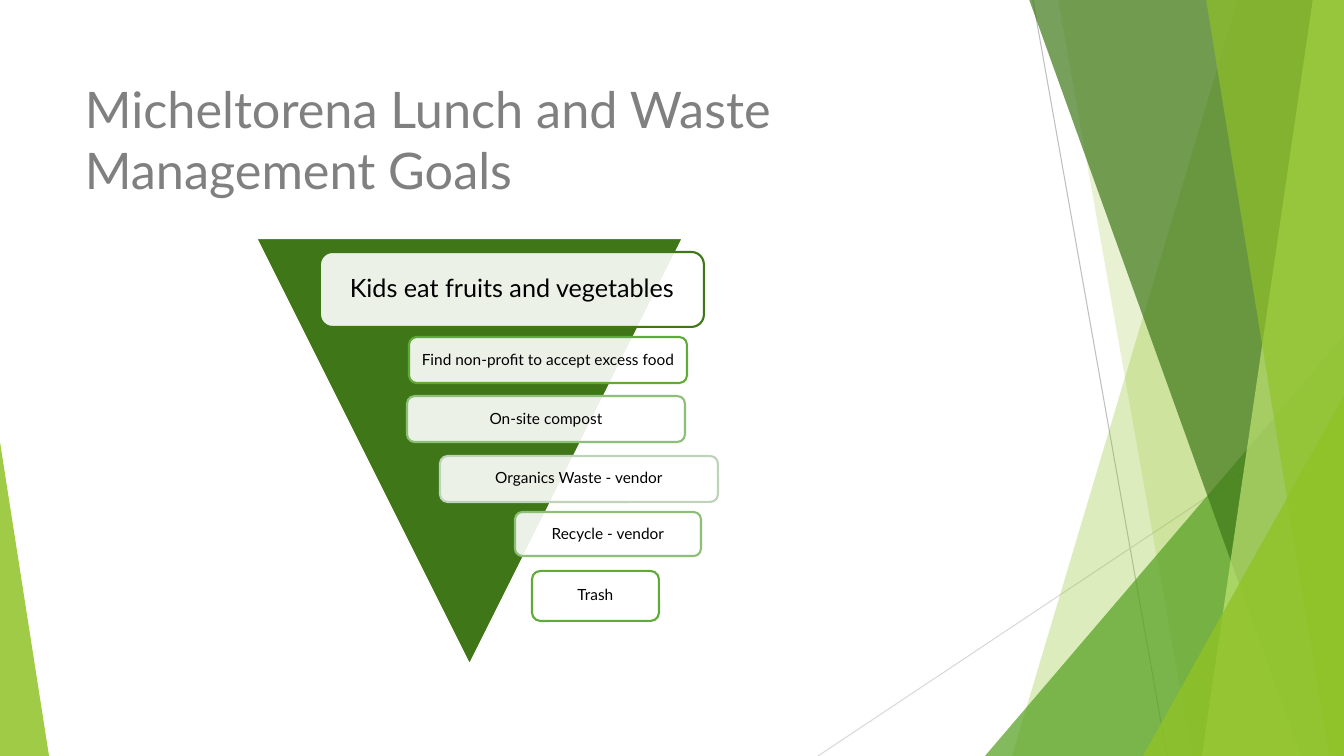
from pptx import Presentation
from pptx.dml.color import RGBColor
from pptx.enum.shapes import MSO_CONNECTOR, MSO_SHAPE
from pptx.enum.text import MSO_ANCHOR, PP_ALIGN
from pptx.oxml.ns import qn
from pptx.util import Emu, Pt
from lxml import etree

PX = 914400 / 100.8
WIDTH, HEIGHT = 1344, 756
FONT = "Lato"

STRAIGHT = MSO_CONNECTOR.STRAIGHT
TRIANGLE = MSO_SHAPE.ISOSCELES_TRIANGLE
ROUNDED = MSO_SHAPE.ROUNDED_RECTANGLE
MIDDLE = MSO_ANCHOR.MIDDLE
CENTER = PP_ALIGN.CENTER

WHITE = RGBColor(0xFF, 0xFF, 0xFF)
BLACK = RGBColor(0x00, 0x00, 0x00)
TITLE_GRAY = RGBColor(0x80, 0x80, 0x80)
RAY_GRAY = RGBColor(0xBF, 0xBF, 0xBF)
PALE_GRAY = RGBColor(0xD9, 0xD9, 0xD9)
LIME = RGBColor(0x90, 0xC2, 0x26)
PALE_LIME = RGBColor(0xC0, 0xE4, 0x74)
GREEN = RGBColor(0x54, 0xA0, 0x21)
FOREST = RGBColor(0x3F, 0x78, 0x19)
FUNNEL_GREEN = RGBColor(0x3E, 0x76, 0x18)
LEAF = RGBColor(0x60, 0xAB, 0x38)
SAGE = RGBColor(0x8D, 0xBF, 0x78)
MIST = RGBColor(0xBF, 0xD2, 0xBA)

# Goals: text, left, top, width, height, outline, text size, inset
GOALS = [
    ("Kids eat fruits and vegetables", 320, 252, 384, 75, FUNNEL_GREEN, 18, 7),
    ("Find non-profit to accept excess food", 409, 337, 278, 46, LEAF, 11, 5),
    ("On-site compost", 407, 396, 278, 46, SAGE, 11, 5),
    ("Organics Waste - vendor", 440, 456, 278, 46, MIST, 11, 5),
    ("Recycle - vendor", 515, 512, 186, 44, SAGE, 11, 5),
    ("Trash", 532, 571, 127, 50, LEAF, 11, 5),
]


def px(*lengths):
    return [Emu(round(length * PX)) for length in lengths]


def paint(shape, color, opacity=100, outline=None):
    shape.shadow.inherit = False
    shape.fill.solid()
    shape.fill.fore_color.rgb = color
    if opacity < 100:
        tint = shape.fill._xPr.find(qn("a:solidFill"))[0]
        etree.SubElement(tint, qn("a:alpha"), val=str(opacity * 1000))
    if outline is None:
        shape.line.fill.background()
    else:
        shape.line.color.rgb = outline
        shape.line.width = Pt(1.5)


def add_ray(slide, x1, y1, x2, y2, color):
    ray = slide.shapes.add_connector(STRAIGHT, *px(x1, y1, x2, y2))
    ray.line.color.rgb = color
    ray.line.width = Pt(0.75)
    etree.SubElement(ray._element.spPr, qn("a:effectLst"))


def add_band(slide, top_x, bottom_x, color, opacity):
    """Band from a slanted left edge to the right edge of the slide."""
    outline = slide.shapes.build_freeform(top_x, -1, scale=PX)
    outline.add_line_segments(
        [(WIDTH, -1), (WIDTH, HEIGHT), (bottom_x, HEIGHT)], close=True)
    paint(outline.convert_to_shape(), color, opacity)


def add_corner(slide, left, top, width, apex, color, opacity):
    """Right triangle standing on the bottom edge of the slide."""
    corner = slide.shapes.add_shape(
        TRIANGLE, *px(left, top, width, HEIGHT - top))
    corner.adjustments[0] = apex
    paint(corner, color, opacity)


def write(shape, text, size, color):
    frame = shape.text_frame
    frame.word_wrap = True
    frame.vertical_anchor = MIDDLE
    paragraph = frame.paragraphs[0]
    paragraph.text = text
    paragraph.font.name = FONT
    paragraph.font.size = Pt(size)
    paragraph.font.color.rgb = color
    return paragraph


def add_goal(slide, text, left, top, width, height, outline, size, inset):
    goal = slide.shapes.add_shape(ROUNDED, *px(left, top, width, height))
    paint(goal, WHITE, 90, outline)
    paragraph = write(goal, text, size, BLACK)
    paragraph.alignment = CENTER
    paragraph.line_spacing = 0.9
    frame = goal.text_frame
    (frame.margin_left, frame.margin_top,
     frame.margin_right, frame.margin_bottom) = px(*[inset] * 4)


def main():
    deck = Presentation()
    deck.slide_width, deck.slide_height = px(WIDTH, HEIGHT)
    slide = deck.slides.add_slide(deck.slide_layouts[6])

    # Background facets
    add_ray(slide, 1033, 0, 1167, HEIGHT, RAY_GRAY)
    add_ray(slide, WIDTH, 406, 818, HEIGHT, PALE_GRAY)
    add_band(slide, 1238, 1012, LIME, 30)
    add_band(slide, 1058, 1192, LIME, 20)
    add_corner(slide, 985, 336, 359, 1, GREEN, 72)
    add_band(slide, 1029, 1301, FOREST, 70)
    add_band(slide, 1313, 1202, PALE_LIME, 70)
    add_band(slide, 1206, 1329, LIME, 65)
    add_corner(slide, 1143, 396, 201, 1, LIME, 80)
    add_corner(slide, 0, 442, 49, 0, LIME, 85)

    # Title
    title = slide.shapes.add_textbox(*px(75, 68, 947, 142))
    write(title, "Micheltorena Lunch and Waste Management Goals",
          36, TITLE_GRAY)

    # Inverted pyramid of goals
    pyramid = slide.shapes.add_shape(TRIANGLE, *px(256, 238, 427, 427))
    pyramid.rotation = 180
    paint(pyramid, FUNNEL_GREEN, outline=WHITE)
    for goal in GOALS:
        add_goal(slide, *goal)

    deck.save("out.pptx")


if __name__ == "__main__":
    main()
